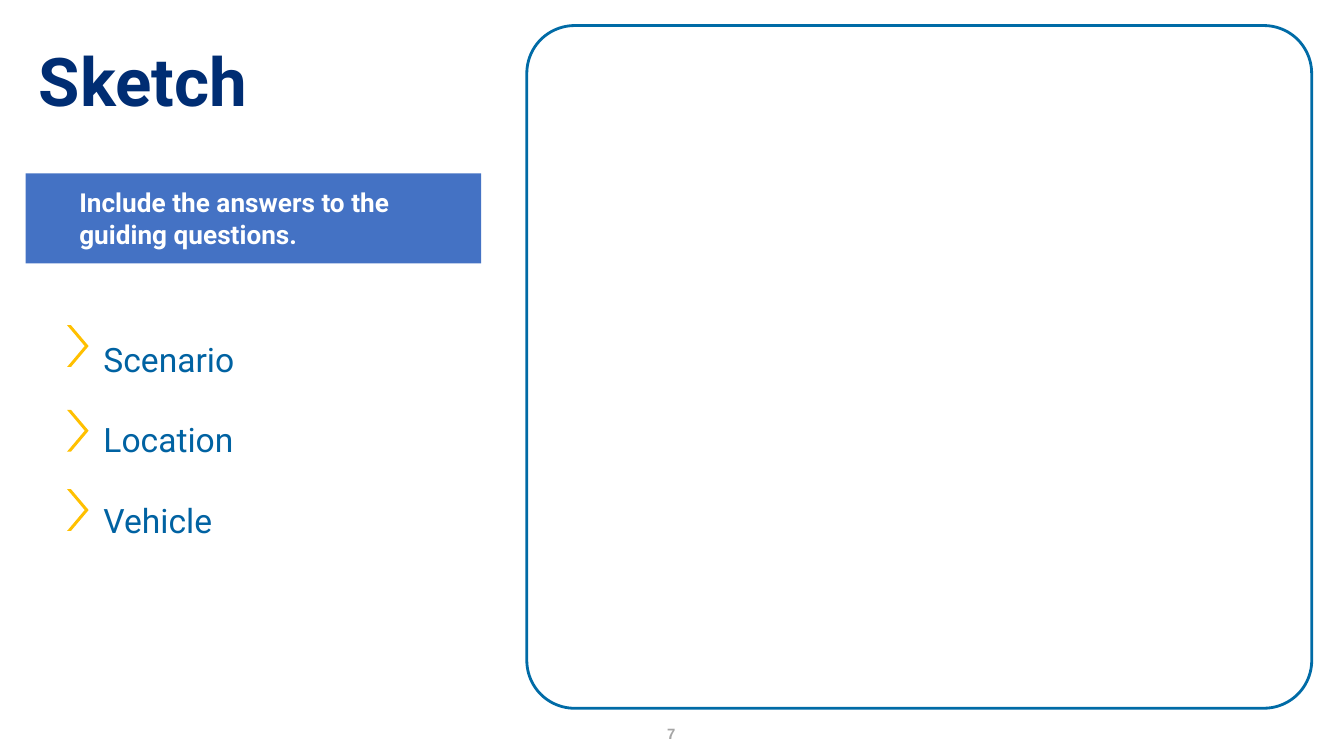
"""Builds the Sketch slide: a title, a prompt, three guiding questions and an empty drawing frame."""
from pptx import Presentation
from pptx.dml.color import RGBColor
from pptx.enum.shapes import MSO_SHAPE
from pptx.enum.text import MSO_ANCHOR, PP_ALIGN
from pptx.util import Inches, Pt

RECTANGLE = MSO_SHAPE.RECTANGLE
ROUNDED = MSO_SHAPE.ROUNDED_RECTANGLE
CHEVRON = MSO_SHAPE.CHEVRON
TOP, MIDDLE = MSO_ANCHOR.TOP, MSO_ANCHOR.MIDDLE
LEFT, CENTER = PP_ALIGN.LEFT, PP_ALIGN.CENTER

COLORS = {
    "title": "002D73",
    "question": "0062A2",
    "banner": "4472C4",
    "banner_text": "FFFFFF",
    "frame": "006BA6",
    "chevron": "FFC000",
    "number": "A5A5A5",
}

TITLE = "Sketch"
PROMPT = "Include the answers to the guiding questions."
QUESTIONS = ["Scenario", "Location", "Vehicle"]
CHEVRON_TOPS = [2.42, 3.05, 3.64]
PAGE_NUMBER = "7"
TEXT_INSETS = (0.07, 0.04, 0.07, 0.04)
BANNER_INSETS = (0.4, 0.1, 0.1, 0.1)


def rgb(name):
    return RGBColor.from_string(COLORS[name])


def write(shape, lines, size, color, font="Roboto", bold=False, align=LEFT,
          anchor=TOP, spacing=1.0, insets=TEXT_INSETS):
    frame = shape.text_frame
    frame.word_wrap = True
    frame.vertical_anchor = anchor
    (frame.margin_left, frame.margin_top,
     frame.margin_right, frame.margin_bottom) = map(Inches, insets)
    frame.text = "\n".join(lines)
    for paragraph in frame.paragraphs:
        paragraph.alignment = align
        paragraph.line_spacing = spacing
        for run in paragraph.runs:
            run.font.name = font
            run.font.size = Pt(size)
            run.font.bold = bold
            run.font.color.rgb = rgb(color)


def add_text(slide, box, lines, size, color, **style):
    write(slide.shapes.add_textbox(*map(Inches, box)), lines, size, color, **style)


def add_shape(slide, kind, box, fill=None, line=None, adjustment=None):
    shape = slide.shapes.add_shape(kind, *map(Inches, box))
    shape.shadow.inherit = False
    if fill:
        shape.fill.solid()
        shape.fill.fore_color.rgb = rgb(fill)
    else:
        shape.fill.background()
    if line:
        shape.line.color.rgb = rgb(line)
        shape.line.width = Pt(1.5)
    else:
        shape.line.fill.background()
    if adjustment is not None:
        shape.adjustments[0] = adjustment
    return shape


def main():
    presentation = Presentation()
    presentation.slide_width = Inches(10)
    presentation.slide_height = presentation.slide_width * 9 // 16
    slide = presentation.slides.add_slide(presentation.slide_layouts[6])

    add_text(slide, (4.72, 5.35, 0.55, 0.23), [PAGE_NUMBER], 8, "number",
             font="Arial", bold=True, align=CENTER)
    add_text(slide, (0.7, 2.18, 2.38, 1.89), QUESTIONS, 18, "question", spacing=2.0)
    banner = add_shape(slide, RECTANGLE, (0.19, 1.29, 3.39, 0.67), fill="banner")
    write(banner, [PROMPT], 14, "banner_text", bold=True, insets=BANNER_INSETS)
    add_shape(slide, ROUNDED, (3.92, 0.19, 5.84, 5.08), line="frame", adjustment=0.07)
    for top in CHEVRON_TOPS:
        add_shape(slide, CHEVRON, (0.5, top, 0.16, 0.31), fill="chevron", adjustment=0.82)
    add_text(slide, (0.22, 0.18, 9.58, 0.9), [TITLE], 36, "title",
             bold=True, anchor=MIDDLE, spacing=0.9)

    presentation.save("out.pptx")


if __name__ == "__main__":
    main()
